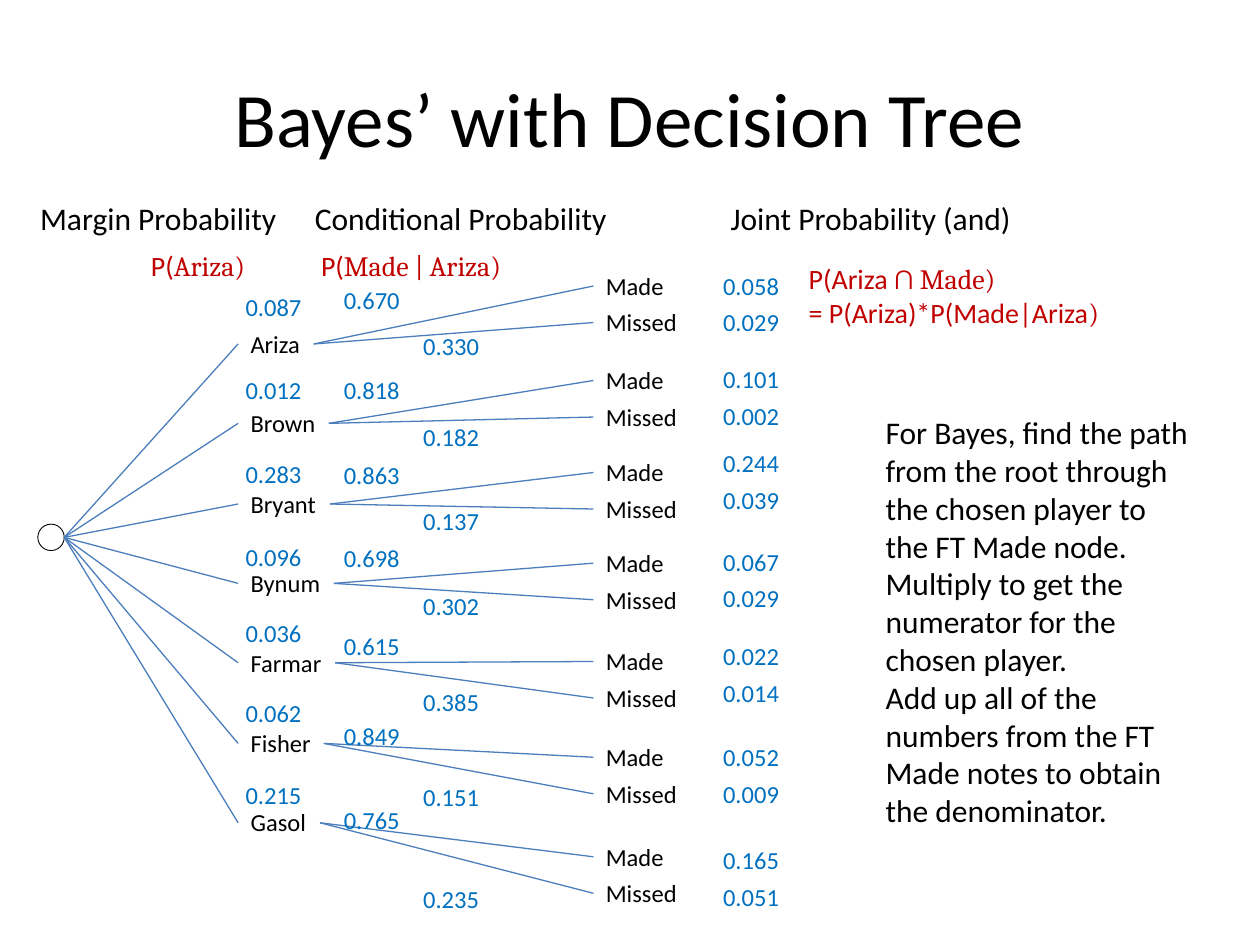
from dataclasses import dataclass

import lxml.etree
import pptx
import pptx.dml.color
import pptx.enum.shapes
import pptx.enum.text
import pptx.oxml.ns
import pptx.util

EMU_PER_PX = 9144
COLOURS = {
    "black": "000000",
    "value": "0070C0",
    "formula": "C00000",
    "branch": "4B7EBC",
}
BODY_FONT = "Calibri"
MATH_FONT = "Cambria"
LABEL_HEIGHT = 34
OUTCOME_GAP = 29


@dataclass(frozen=True)
class Player:
    name: str
    width: int
    margin: str
    margin_top: int
    conditional: tuple[str, str]
    conditional_tops: tuple[int, int]
    joint: tuple[str, str]
    joint_top: int
    outcome_top: int


@dataclass(frozen=True)
class Caption:
    box: tuple[int, int, int, int]
    paragraphs: tuple[tuple[str, ...], ...]
    size: int = 18
    colour: str = "black"
    wrap: bool = False


PLAYERS = [
    Player("Ariza", 60, "0.087", 227, ("0.670", "0.330"), (221, 258), ("0.058", "0.029"), 210, 210),
    Player("Brown", 72, "0.012", 293, ("0.818", "0.182"), (293, 330), ("0.101", "0.002"), 284, 285),
    Player("Bryant", 73, "0.283", 359, ("0.863", "0.137"), (360, 397), ("0.244", "0.039"), 351, 358),
    Player("Bynum", 76, "0.096", 425, ("0.698", "0.302"), (426, 464), ("0.067", "0.029"), 429, 430),
    Player("Farmar", 77, "0.036", 486, ("0.615", "0.385"), (496, 540), ("0.022", "0.014"), 504, 508),
    Player("Fisher", 68, "0.062", 549, ("0.849", "0.151"), (567, 616), ("0.052", "0.009"), 584, 584),
    Player("Gasol", 65, "0.215", 614, ("0.765", "0.235"), (634, 697), ("0.165", "0.051"), 666, 663),
]
OUTCOMES = [("Made", 67), ("Missed", 77)]
CONDITIONAL_LEFTS = (263, 326)

CAPTIONS = [
    Caption(
        (632, 203, 252, 64),
        (("P(Ariza ", "∩ Made)"), ("= P(Ariza)*P(Made|Ariza", ")")),
        16, "formula", True,
    ),
    Caption((570, 153, 245, 40), (("Joint Probability (and)",),)),
    Caption((245, 192, 187, 37), (("P(", "Made | Ariza)"),), 16, "formula"),
    Caption((240, 153, 255, 40), (("Conditional Probability",),)),
    Caption((110, 192, 103, 37), (("P(", "Ariza)"),), 16, "formula"),
    Caption((22, 153, 210, 40), (("Margin Probability",),)),
    Caption(
        (693, 323, 262, 343),
        (
            ("For Bayes, find the path from the root through the chosen player to "
             "the FT Made node. Multiply to get the numerator for the chosen player.",),
            ("Add up all of the numbers from the FT Made notes to obtain the denominator.",),
        ),
        wrap=True,
    ),
]


def px(length: int) -> pptx.util.Emu:
    return pptx.util.Emu(length * EMU_PER_PX)


def colour(name: str) -> pptx.dml.color.RGBColor:
    return pptx.dml.color.RGBColor.from_string(COLOURS[name])


def add_caption(slide, caption: Caption):
    shape = slide.shapes.add_textbox(*map(px, caption.box))
    text_frame = shape.text_frame
    text_frame.word_wrap = caption.wrap
    text_frame.auto_size = pptx.enum.text.MSO_AUTO_SIZE.SHAPE_TO_FIT_TEXT
    for index, pieces in enumerate(caption.paragraphs):
        paragraph = text_frame.add_paragraph() if index else text_frame.paragraphs[0]
        paragraph.text = pieces[0]
        for piece in pieces[1:]:
            paragraph.add_run().text = piece
        for run, font in zip(paragraph.runs, (BODY_FONT, MATH_FONT)):
            run.font.name = font
            run.font.size = pptx.util.Pt(caption.size)
            run.font.color.rgb = colour(caption.colour)
    return shape


def add_label(slide, text: str, left: int, top: int, width: int = 65, colour_name: str = "value"):
    return add_caption(slide, Caption((left, top, width, LABEL_HEIGHT), ((text,),), 14, colour_name))


def add_branch(slide, start, end, target, source=None) -> None:
    connector = slide.shapes.add_connector(
        pptx.enum.shapes.MSO_CONNECTOR.STRAIGHT, *start, *end
    )
    if source is not None:
        connector.begin_connect(source, 3)
    connector.end_connect(target, 1)
    connector.line.color.rgb = colour("branch")
    connector.line.width = pptx.util.Pt(0.75)
    properties = connector._element.spPr
    lxml.etree.SubElement(properties, pptx.oxml.ns.qn("a:effectLst"))


def left_middle(shape) -> tuple[int, int]:
    return shape.left, shape.top + shape.height // 2


def right_middle(shape) -> tuple[int, int]:
    return shape.left + shape.width, shape.top + shape.height // 2


def add_title(slide) -> None:
    title = add_caption(slide, Caption((50, 30, 900, 125), (("Bayes’ with Decision Tree",),), 44, wrap=True))
    title.text_frame.auto_size = pptx.enum.text.MSO_AUTO_SIZE.NONE
    title.text_frame.vertical_anchor = pptx.enum.text.MSO_ANCHOR.MIDDLE
    title.text_frame.paragraphs[0].alignment = pptx.enum.text.PP_ALIGN.CENTER


def add_root(slide):
    root = slide.shapes.add_shape(
        pptx.enum.shapes.MSO_SHAPE.OVAL, px(30), px(416), px(21), px(21)
    )
    root.shadow.inherit = False
    root.fill.background()
    root.line.color.rgb = colour("black")
    root.line.width = pptx.util.Pt(0.5)
    return root


def add_player(slide, root, player: Player, top: int) -> None:
    name = add_label(slide, player.name, 189, top, player.width, "black")
    add_branch(slide, right_middle(root), left_middle(name), name)
    add_label(slide, player.margin, 185, player.margin_top)
    for index, (outcome, width) in enumerate(OUTCOMES):
        offset = index * OUTCOME_GAP
        node = add_label(slide, outcome, 471, player.outcome_top + offset, width, "black")
        add_branch(slide, right_middle(name), left_middle(node), node, name)
        add_label(slide, player.joint[index], 564, player.joint_top + offset)
        add_label(slide, player.conditional[index], CONDITIONAL_LEFTS[index], player.conditional_tops[index])


def main() -> None:
    presentation = pptx.Presentation()
    presentation.slide_width = px(1000)
    presentation.slide_height = px(750)
    slide = presentation.slides.add_slide(presentation.slide_layouts[6])
    add_title(slide)
    root = add_root(slide)
    for index, player in enumerate(PLAYERS):
        add_player(slide, root, player, round(256 + index * 380 / 6))
    for caption in CAPTIONS:
        add_caption(slide, caption)
    presentation.save("out.pptx")


if __name__ == "__main__":
    main()
